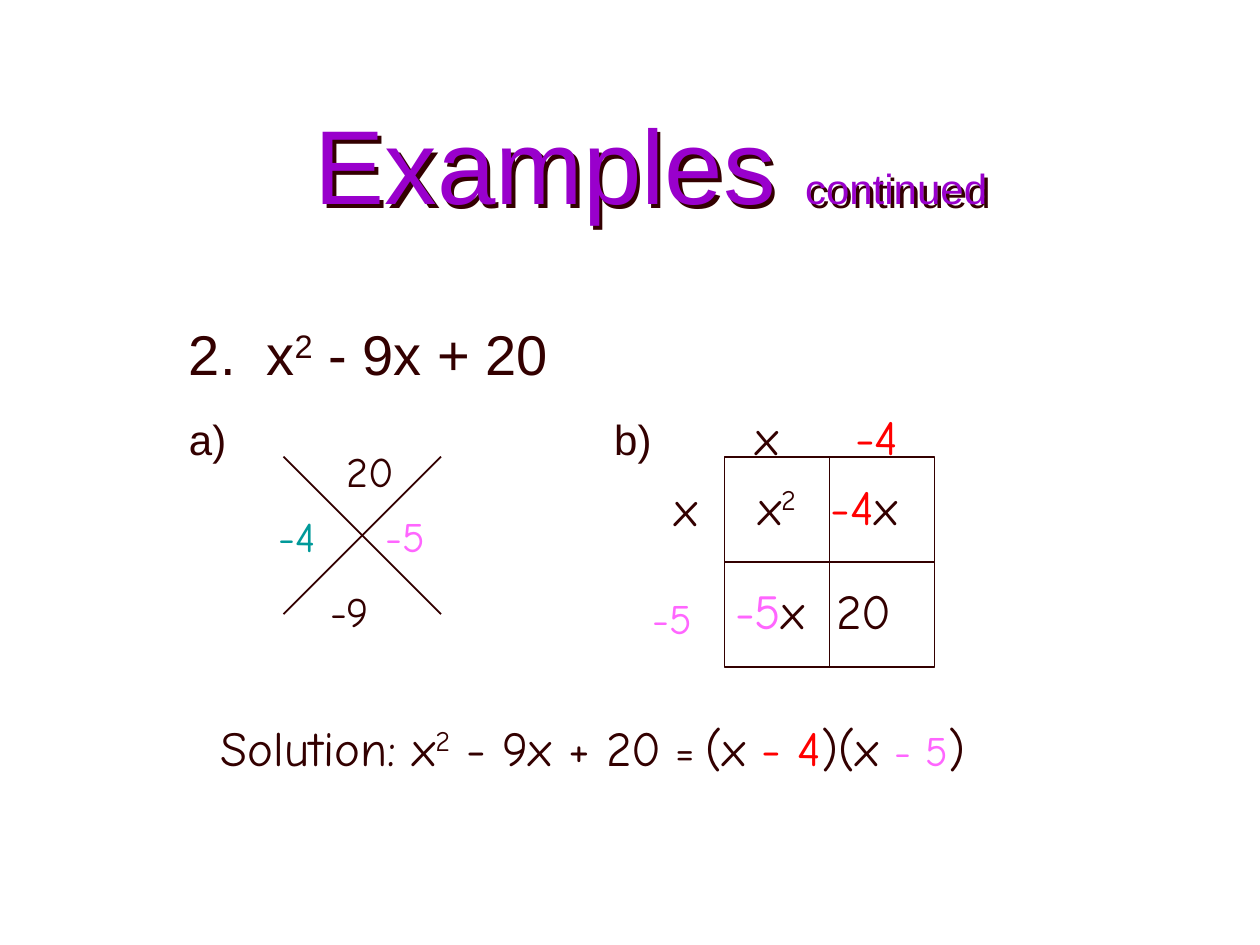
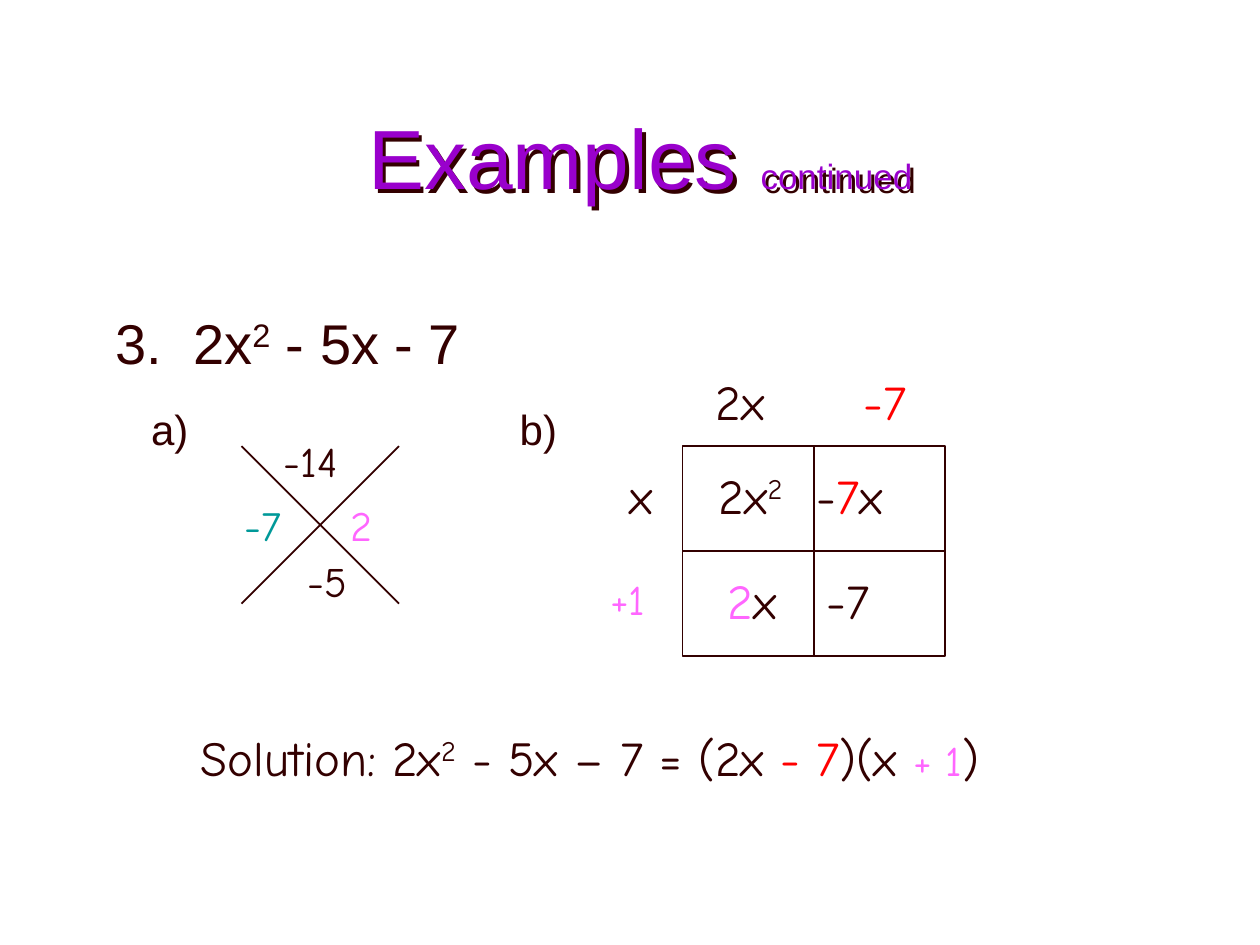
from lxml.etree import SubElement
from pptx import Presentation
from pptx.dml.color import RGBColor
from pptx.enum.shapes import MSO_CONNECTOR, MSO_SHAPE
from pptx.enum.text import MSO_ANCHOR, MSO_AUTO_SIZE, PP_ALIGN
from pptx.oxml.ns import qn
from pptx.util import Inches, Pt

PURPLE = RGBColor(0x99, 0x00, 0xCC)
MAROON = RGBColor(0x33, 0x00, 0x00)
RED = RGBColor(0xFF, 0x00, 0x00)
PINK = RGBColor(0xFF, 0x66, 0xFF)
TEAL = RGBColor(0x00, 0x99, 0x99)
SANS, HAND = "Arial", "Comic Neue"
COLS, ROWS = 120, 90


def part(text, **fmt):
    return text, fmt


def write(tf, parts, size=28, font=HAND, color=MAROON, align=PP_ALIGN.CENTER):
    tf.word_wrap = True
    tf.auto_size = MSO_AUTO_SIZE.NONE
    tf.vertical_anchor = MSO_ANCHOR.MIDDLE
    tf.margin_left = tf.margin_right = tf.margin_top = tf.margin_bottom = 0
    p = tf.paragraphs[0]
    p.alignment = align
    for text, fmt in parts:
        r = p.add_run()
        r.text = text
        r.font.name = font
        r.font.size = Pt(fmt.get("size", size))
        r.font.color.rgb = fmt.get("color", color)
        if fmt.get("sup"):
            r.font._element.set("baseline", "30000")
    return p


class Deck:
    def __init__(self):
        self.prs = Presentation()
        self.prs.slide_width, self.prs.slide_height = Inches(10), Inches(7.5)
        self.s = None

    def x(self, cols):
        return round(self.prs.slide_width * cols / COLS)

    def y(self, rows):
        return round(self.prs.slide_height * rows / ROWS)

    def box(self, left, top, width, height):
        return self.x(left), self.y(top), self.x(width), self.y(height)

    def title(self, area, size, small):
        self.s = self.prs.slides.add_slide(self.prs.slide_layouts[5])
        sp = self.s.shapes.title
        sp.left, sp.top, sp.width, sp.height = self.box(*area)
        write(sp.text_frame, [part("Examples "), part("continued", size=small)],
              size=size, font=SANS, color=PURPLE)
        effects = SubElement(sp._element.spPr, qn("a:effectLst"))
        shadow = SubElement(effects, qn("a:outerShdw"), dist="35921",
                            dir="2700000", algn="ctr", rotWithShape="0")
        SubElement(shadow, qn("a:srgbClr"), val=str(MAROON))

    def label(self, cx, cy, *parts, **fmt):
        width, height = 14, 6
        sp = self.s.shapes.add_textbox(
            *self.box(cx - width / 2, cy - height / 2, width, height))
        write(sp.text_frame, parts, **fmt)

    def line_of_text(self, left, cy, *parts, width=84, tab=None, **fmt):
        sp = self.s.shapes.add_textbox(*self.box(left, cy - 3, width, 6))
        p = write(sp.text_frame, parts, align=PP_ALIGN.LEFT, **fmt)
        if tab:
            tabs = SubElement(p._p.get_or_add_pPr(), qn("a:tabLst"))
            SubElement(tabs, qn("a:tab"), pos=str(self.x(tab)), algn="l")

    def line(self, x1=0, y1=0, x2=0, y2=0):
        c = self.s.shapes.add_connector(
            MSO_CONNECTOR.STRAIGHT, self.x(x1), self.y(y1), self.x(x2), self.y(y2))
        c.line.color.rgb = MAROON
        c.line.width = Pt(1)
        SubElement(c._element.spPr, qn("a:effectLst"))
        return c

    def cross(self, left, top, side=15):
        self.line(left, top, left + side, top + side)
        self.line(left, top + side, left + side, top)

    def area_box(self, left, top, width, height=20):
        sp = self.s.shapes.add_shape(
            MSO_SHAPE.RECTANGLE, *self.box(left, top, width, height))
        sp.shadow.inherit = False
        sp.fill.background()
        sp.line.color.rgb = MAROON
        sp.line.width = Pt(1)
        for start, end in ((0, 2), (1, 3)):
            c = self.line()
            c.begin_connect(sp, start)
            c.end_connect(sp, end)

    def problem(self, left, cy, number, *parts):
        self.line_of_text(left, cy, part(number + "\t"), *parts,
                          size=32, font=SANS, tab=7.4)

    def steps(self, cy, *lefts):
        for name, left in zip(("a)", "b)"), lefts):
            self.line_of_text(left, cy, part(name), width=6, size=24, font=SANS)


def example_two(deck):
    deck.title((13, 8, 98, 15), 60, 24)
    deck.problem(18, 33.6, "2.", part("x"), part("2", sup=True), part(" - 9x + 20"))
    deck.steps(41.8, 18, 58.5)

    deck.cross(27, 43.5)
    deck.label(35.3, 44.8, part("20"), size=24)
    deck.label(28.3, 51, part("-4"), size=24, color=TEAL)
    deck.label(38.6, 51, part("-5"), size=24, color=PINK)
    deck.label(33.3, 58.2, part("-9"), size=24)

    deck.area_box(69, 43.5, 20)
    deck.label(73.1, 41.5, part("x"))
    deck.label(83.5, 41.5, part("-4"), color=RED)
    deck.label(65.3, 48.3, part("x"))
    deck.label(64, 58.8, part("-5"), size=24, color=PINK)
    deck.label(74, 48.2, part("x"), part("2", sup=True))
    deck.label(82.3, 48.2, part("-4", color=RED), part("x"))
    deck.label(73.3, 58.1, part("-5", color=PINK), part("x"))
    deck.label(82.3, 58.1, part("20"))

    deck.line_of_text(
        21, 71.1, part("Solution: x"), part("2", sup=True), part(" - 9x + 20"),
        part(" =", size=24), part(" ", size=18), part("(x "),
        part("- 4", color=RED), part(")(x "),
        part("- 5", size=24, color=PINK), part(")"))


def example_three(deck):
    deck.title((10, 11, 102, 7.8), 48, 20)
    deck.problem(11, 32.6, "3.", part("2x"), part("2", sup=True), part(" - 5x - 7"))
    deck.steps(40.8, 14.4, 49.5)

    deck.cross(23, 42.5)
    deck.label(29.6, 43.9, part("-14"), size=24)
    deck.label(25, 50, part("-7"), size=24, color=TEAL)
    deck.label(34.4, 50, part("2"), size=24, color=PINK)
    deck.label(31.2, 55.3, part("-5"), size=24)

    deck.area_box(65, 42.5, 25)
    deck.label(70.5, 38.2, part("2x"))
    deck.label(84.3, 38.2, part("-7"), color=RED)
    deck.label(61.1, 47.1, part("x"))
    deck.label(59.8, 57, part("+1"), size=24, color=PINK)
    deck.label(71.5, 47.1, part("2x"), part("2", sup=True))
    deck.label(80.9, 47.1, part("-"), part("7", color=RED), part("x"))
    deck.label(71.6, 57.1, part("2", color=PINK), part("x"))
    deck.label(80.8, 57.1, part("-7"))

    deck.line_of_text(
        19.1, 72.1, part("Solution: 2x"), part("2", sup=True),
        part(" - 5x – 7 = (2x "), part("- 7", color=RED), part(")(x "),
        part("+ 1", size=24, color=PINK), part(")"))


def main():
    deck = Deck()
    example_two(deck)
    example_three(deck)
    deck.prs.save("out.pptx")


if __name__ == "__main__":
    main()
